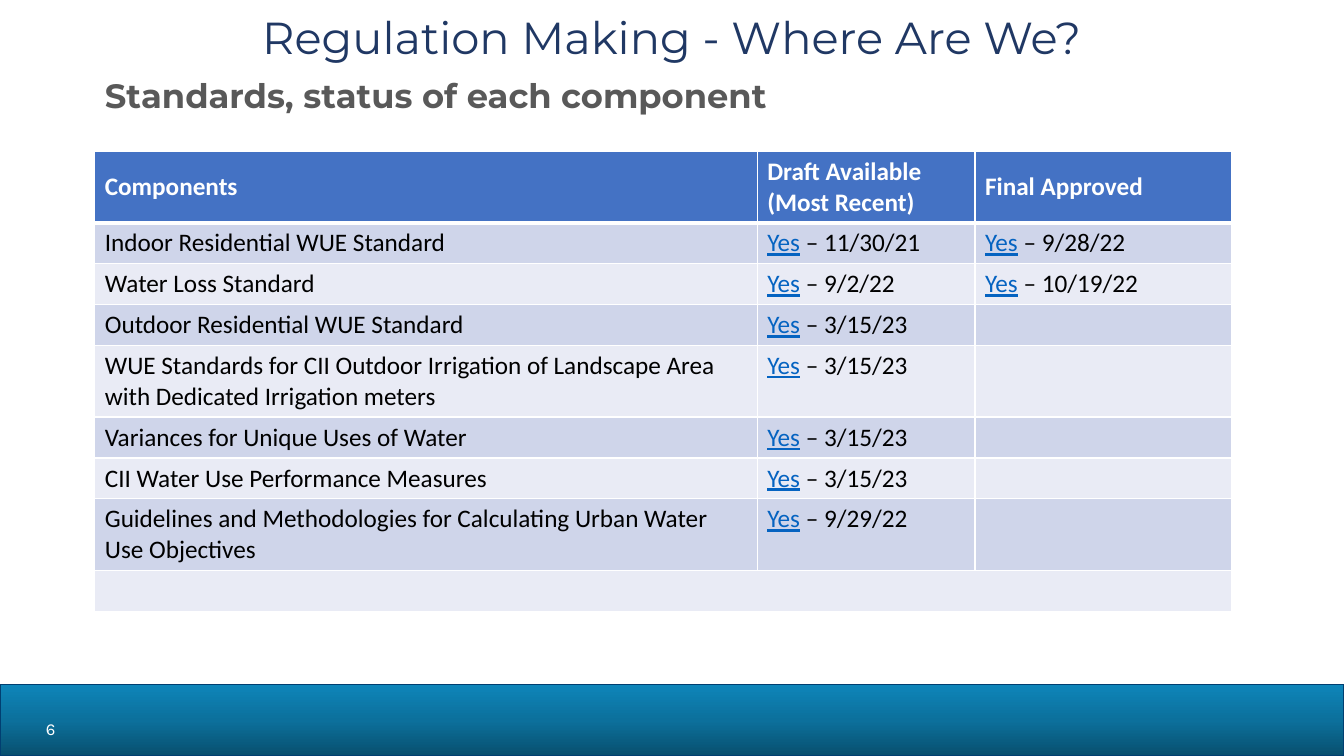
"""Build the slide on the status of each regulation component."""
from copy import deepcopy
from dataclasses import dataclass

from lxml.etree import SubElement
from pptx import Presentation
from pptx.dml.color import RGBColor
from pptx.enum.shapes import MSO_SHAPE
from pptx.enum.text import MSO_ANCHOR, MSO_AUTO_SIZE, PP_ALIGN
from pptx.oxml.ns import qn
from pptx.util import Inches, Pt


@dataclass(frozen=True)
class Theme:
    head: str = "Montserrat"
    body: str = "Calibri"
    page: str = "Karla"
    navy: str = "203864"
    gray: str = "595959"
    black: str = "000000"
    white: str = "FFFFFF"
    link: str = "0563C1"
    blue: str = "4472C4"
    rows: tuple = ("CFD5EA", "E9EBF5")
    band: tuple = ("084F6E", "0C709C", "0E85B9")
    edge: str = "013F71"
    title: float = 32
    topic: float = 24.1
    cell: float = 18
    small: float = 12


@dataclass(frozen=True)
class Label:
    text: str
    box: tuple
    font: str
    size: float
    color: str
    align: PP_ALIGN
    pitch: float = 0.9
    bold: bool = False


@dataclass(frozen=True)
class Part:
    name: str
    draft: str = ""
    final: str = ""
    high: float = 0.38


THEME = Theme()
TITLE = Label("Regulation Making - Where Are We?", (0, 0.11, 13.33, 0.7),
              THEME.head, THEME.title, THEME.navy, PP_ALIGN.CENTER)
TOPIC = Label("Standards, status of each component", (0.94, 0.8, 12.39, 0.41),
              THEME.head, THEME.topic, THEME.gray, PP_ALIGN.LEFT, 0.7, True)
PAGE = Label("6", (0.18, 7.1, 0.47, 0.32),
             THEME.page, THEME.small, THEME.white, PP_ALIGN.RIGHT)
WIDTHS = (6.57, 2.16, 2.55)
PARTS = (
    Part("Components", "Draft Available \v(Most Recent)", "Final Approved", 0.66),
    Part("Indoor Residential WUE Standard", "11/30/21", "9/28/22"),
    Part("Water Loss Standard", "9/2/22", "10/19/22"),
    Part("Outdoor Residential WUE Standard", "3/15/23"),
    Part("WUE Standards for CII Outdoor Irrigation of Landscape Area "
         "with Dedicated Irrigation meters", "3/15/23", high=0.66),
    Part("Variances for Unique Uses of Water", "3/15/23"),
    Part("CII Water Use Performance Measures", "3/15/23"),
    Part("Guidelines and Methodologies for Calculating Urban Water "
         "Use Objectives", "9/29/22", high=0.66),
    Part(""),
)


def style(font, name: str, size: float, color: str, bold: bool = False) -> None:
    """Set the face, size, colour and weight of a font."""
    font.name, font.size, font.bold = name, Pt(size), bold
    font.color.rgb = RGBColor.from_string(color)


def write(shape, label: Label) -> None:
    """Place a shape and fill it with one line of text."""
    shape.left, shape.top, shape.width, shape.height = map(Inches, label.box)
    frame = shape.text_frame
    frame.text = label.text
    frame.word_wrap = True
    frame.auto_size = MSO_AUTO_SIZE.NONE
    frame.vertical_anchor = MSO_ANCHOR.TOP
    para = frame.paragraphs[0]
    para.alignment, para.line_spacing = label.align, label.pitch
    para.space_before = Pt(0)
    props = para._p.get_or_add_pPr()
    props.set("marL", "0")
    props.set("indent", "0")
    SubElement(props, qn("a:buNone"))
    style(para.runs[0].font, label.font, label.size, label.color, label.bold)


def draw_band(slide) -> None:
    """Draw the shaded band along the foot of the slide."""
    band = slide.shapes.add_shape(MSO_SHAPE.RECTANGLE, 0, Inches(6.79),
                                  Inches(13.33), Inches(0.71))
    band.shadow.inherit = False
    band.line.color.rgb = RGBColor.from_string(THEME.edge)
    band.line.width = Pt(1)
    band.fill.gradient()
    band.fill.gradient_angle = 90
    stops = band._element.spPr.find(qn("a:gradFill")).find(qn("a:gsLst"))
    stops.append(deepcopy(stops[-1]))
    for stop, color, place in zip(band.fill.gradient_stops, THEME.band, (0, 0.5, 1)):
        stop.color.rgb = RGBColor.from_string(color)
        stop.position = place


def rule(cell, head: bool) -> None:
    """Add white borders to a cell, heavy below the header."""
    props = cell._tc.get_or_add_tcPr()
    sides = {"L": 1, "R": 1, "T": 1, "B": 3} if head else {"L": 1, "R": 1, "B": 1}
    for side, width in sides.items():
        line = SubElement(props, qn(f"a:ln{side}"), w=str(Pt(width)))
        fill = SubElement(line, qn("a:solidFill"))
        SubElement(fill, qn("a:srgbClr"), val=THEME.white)


def fill_cell(cell, text: str, row: int, dated: bool) -> None:
    """Format one cell and write its text, with a linked look before dates."""
    head = row == 0
    rule(cell, head)
    cell.fill.solid()
    color = THEME.blue if head else THEME.rows[(row - 1) % 2]
    cell.fill.fore_color.rgb = RGBColor.from_string(color)
    cell.vertical_anchor = MSO_ANCHOR.MIDDLE if head else MSO_ANCHOR.TOP
    if not text:
        return
    para = cell.text_frame.paragraphs[0]
    para.text = "Yes" if dated else text
    ink = THEME.white if head else THEME.black
    for run in para.runs:
        style(run.font, THEME.body, THEME.cell, THEME.link if dated else ink, head)
        run.font.underline = dated
    if dated:
        date = para.add_run()
        date.text = f" – {text}"
        style(date.font, THEME.body, THEME.cell, ink)


def draw_table(slide) -> None:
    """Draw the table of components and their dates."""
    table = slide.shapes.add_table(
        len(PARTS), len(WIDTHS), Inches(0.94), Inches(1.5),
        Inches(sum(WIDTHS)), Inches(sum(part.high for part in PARTS))).table
    for col, width in zip(table.columns, WIDTHS):
        col.width = Inches(width)
    for row, part in enumerate(PARTS):
        table.rows[row].height = Inches(part.high)
        for col, text in enumerate((part.name, part.draft, part.final)):
            fill_cell(table.cell(row, col), text, row, row > 0 and col > 0)
    last = len(PARTS) - 1
    table.cell(last, 0).merge(table.cell(last, len(WIDTHS) - 1))


def main() -> None:
    """Build and save the slide."""
    deck = Presentation()
    deck.slide_width, deck.slide_height = Inches(13.33), Inches(7.5)
    slide = deck.slides.add_slide(deck.slide_layouts[1])
    draw_band(slide)
    write(slide.shapes.title, TITLE)
    write(slide.placeholders[1], TOPIC)
    write(slide.shapes.add_textbox(*map(Inches, PAGE.box)), PAGE)
    draw_table(slide)
    deck.save("out.pptx")


if __name__ == "__main__":
    main()
